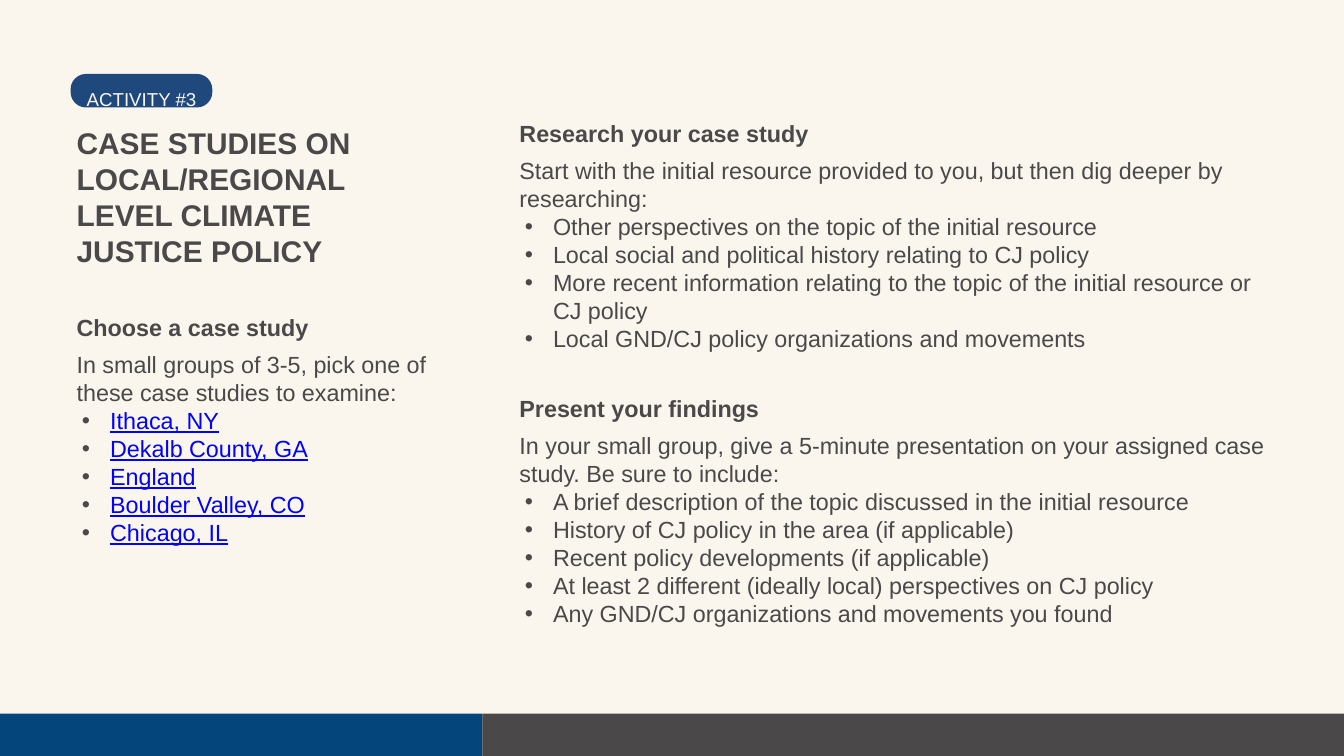
from lxml.etree import SubElement
from pptx import Presentation
from pptx.dml.color import RGBColor
from pptx.enum.shapes import MSO_SHAPE as Shape
from pptx.enum.text import MSO_ANCHOR as Anchor, MSO_AUTO_SIZE as AutoSize, PP_ALIGN as Align
from pptx.oxml.ns import qn
from pptx.util import Inches, Pt

CREAM = RGBColor(0xFA, 0xF6, 0xEE)
CHARCOAL = RGBColor(0x4A, 0x48, 0x49)
BLUE = RGBColor(0x04, 0x46, 0x7C)
NAVY = RGBColor(0x1F, 0x49, 0x7D)
LINK = RGBColor(0x00, 0x00, 0xFF)

BODY = {"size": Pt(25), "bold": False}
HEADING = {"size": Pt(25), "bold": True}
TITLE = {"size": Pt(32), "bold": True}
LABEL = {"size": Pt(20)}
LINKED = {**BODY, "underline": True}
BODY_LEADING = Pt(30)
TITLE_LEADING = Pt(38.6)

SECTIONS = [
    (1.14, 4.66, 5.66, "Choose a case study",
     "In small groups of 3-5, pick one of these case studies to examine:",
     ["Ithaca, NY", "Dekalb County, GA", "England", "Boulder Valley, CO", "Chicago, IL"],
     LINKED, LINK),
    (7.73, 1.78, 11.15, "Research your case study",
     "Start with the initial resource provided to you, but then dig deeper by researching:",
     ["Other perspectives on the topic of the initial resource",
      "Local social and political history relating to CJ policy",
      "More recent information relating to the topic of the initial resource or CJ policy",
      "Local GND/CJ policy organizations and movements"],
     BODY, CHARCOAL),
    (7.73, 5.87, 11.15, "Present your findings",
     "In your small group, give a 5-minute presentation on your assigned case study. "
     "Be sure to include:",
     ["A brief description of the topic discussed in the initial resource",
      "History of CJ policy in the area (if applicable)",
      "Recent policy developments (if applicable)",
      "At least 2 different (ideally local) perspectives on CJ policy",
      "Any GND/CJ organizations and movements you found"],
     BODY, CHARCOAL),
]


def apply_format(target, values):
    """Set each named attribute on the target."""
    for name, value in values.items():
        setattr(target, name, value)


def prepare_frame(box):
    """Give a text box wrapping, no margins and top anchoring."""
    apply_format(box.text_frame, {
        "margin_left": 0, "margin_right": 0, "margin_top": 0, "margin_bottom": 0,
        "word_wrap": True, "auto_size": AutoSize.NONE, "vertical_anchor": Anchor.TOP})
    return box.text_frame


def add_frame(page, left, top, width, height):
    """Add a text box and return its frame."""
    box = page.shapes.add_textbox(Inches(left), Inches(top), Inches(width), Inches(height))
    return prepare_frame(box)


def write(para, text, style, leading, color=CHARCOAL):
    """Write one formatted run into a paragraph."""
    apply_format(para, {"alignment": Align.LEFT, "line_spacing": leading,
                        "space_before": Pt(0), "space_after": Pt(0)})
    span = para.add_run()
    span.text = text
    apply_format(span.font, {"name": "Arial", **style})
    span.font.color.rgb = color


def add_bullet(para):
    """Give a paragraph a hanging charcoal bullet."""
    para.level = 1
    props = para._p.get_or_add_pPr()
    props.set("marL", str(Inches(0.5)))
    props.set("indent", str(Inches(-0.42)))
    tint = SubElement(props, qn("a:buClr"))
    SubElement(tint, qn("a:srgbClr"), val=str(CHARCOAL))
    SubElement(props, qn("a:buFont"), typeface="Arial")
    SubElement(props, qn("a:buChar"), char="•")


def add_block(page, kind, left, top, width, height, color):
    """Add a filled shape without outline or shadow."""
    block = page.shapes.add_shape(kind, Inches(left), Inches(top), Inches(width), Inches(height))
    block.shadow.inherit = False
    block.fill.solid()
    block.fill.fore_color.rgb = color
    block.line.fill.background()
    return block


def add_title(page, text):
    """Place and format the title placeholder."""
    title = page.shapes.title
    apply_format(title, {"left": Inches(1.14), "top": Inches(1.85),
                         "width": Inches(4.65), "height": Inches(2.15)})
    write(prepare_frame(title).paragraphs[0], text, TITLE, TITLE_LEADING)


def add_section(page, left, top, width, heading, intro, items, style, color):
    """Add a heading with its introduction and bullet list below."""
    head = add_frame(page, left, top, width, 0.42)
    write(head.paragraphs[0], heading, HEADING, BODY_LEADING)
    body = add_frame(page, left, top + 0.55, width, 2.95)
    write(body.paragraphs[0], intro, BODY, BODY_LEADING)
    for item in items:
        para = body.add_paragraph()
        add_bullet(para)
        write(para, item, style, BODY_LEADING, color)


def add_label(page, text):
    """Add the rounded activity label."""
    pill = add_block(page, Shape.ROUNDED_RECTANGLE, 1.05, 1.1, 2.11, 0.5, NAVY)
    pill.adjustments[0] = 0.46
    frame = add_frame(page, 1.29, 1.18, 9.33, 0.34)
    write(frame.paragraphs[0], text, LABEL, 1.4, CREAM)


def main():
    """Build the slide and save the deck."""
    deck = Presentation()
    deck.slide_width, deck.slide_height = Inches(20), Inches(11.25)
    page = deck.slides.add_slide(deck.slide_layouts[5])
    page.background.fill.solid()
    page.background.fill.fore_color.rgb = CREAM
    add_title(page, "CASE STUDIES ON LOCAL/REGIONAL LEVEL CLIMATE JUSTICE POLICY")
    for left, width, color in [(0, 7.18, BLUE), (7.18, 12.82, CHARCOAL)]:
        add_block(page, Shape.RECTANGLE, left, 10.62, width, 0.63, color)
    for section in SECTIONS:
        add_section(page, *section)
    add_label(page, "ACTIVITY #3")
    deck.save("out.pptx")


if __name__ == "__main__":
    main()
